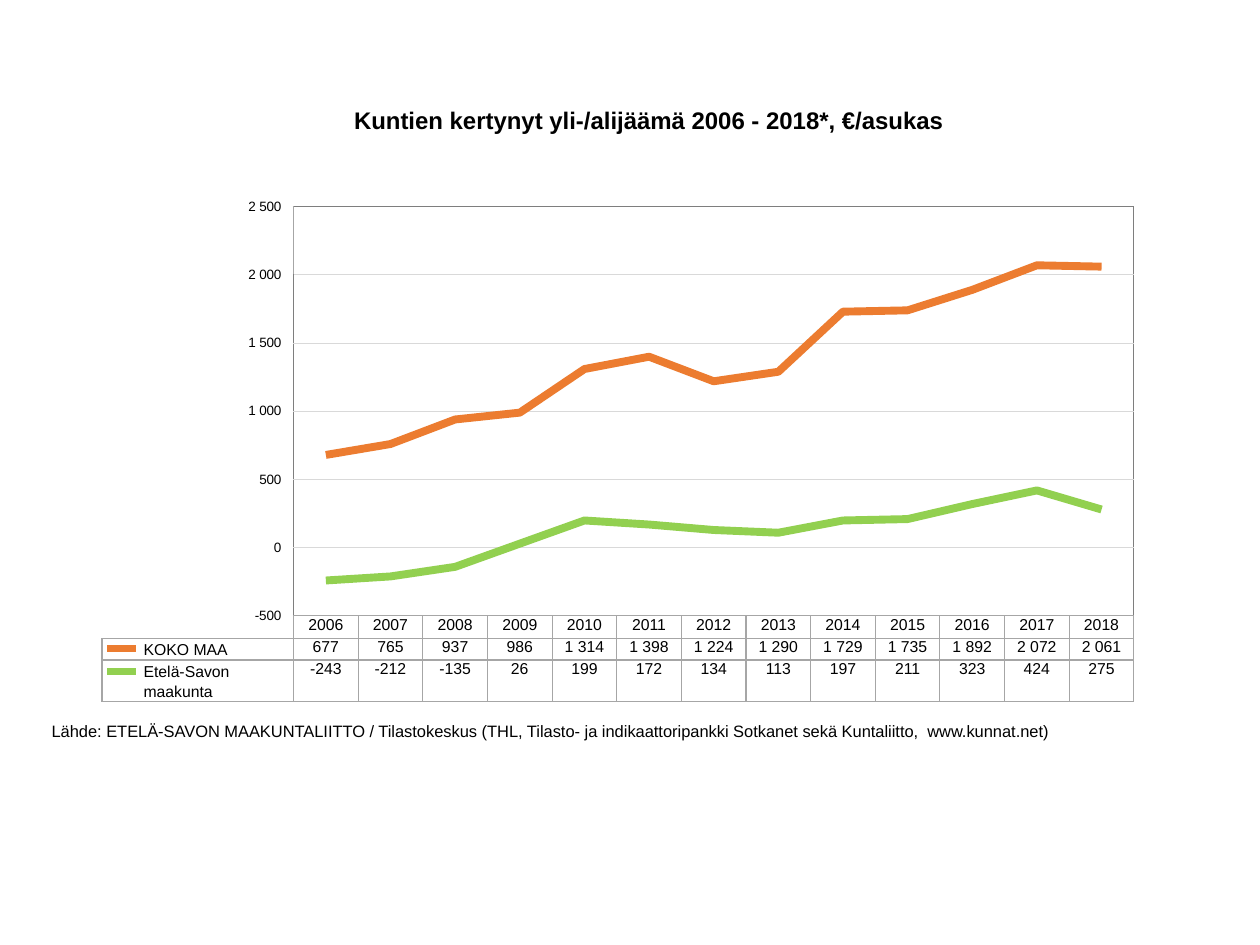
from lxml import etree
from pptx import Presentation
from pptx import util as u
from pptx.chart import data as cd
from pptx.dml.color import RGBColor
from pptx.enum import chart as ch, shapes, text
from pptx.oxml import parse_xml
from pptx.oxml.ns import nsdecls, qn

THEME = {
    "font": "Arial", "ink": "000000", "edge": "A6A6A6", "frame": "7E7E7E",
    "grid": "D9D9D9", "title": 13.7, "note": 9.4, "cell": 9, "axis": 7.7,
}
YEARS = range(2006, 2019)
ROWS = [
    ("KOKO MAA", "EC7C30", [677, 765, 937, 986, 1314, 1398, 1224, 1290,
                            1729, 1735, 1892, 2072, 2061]),
    ("Etelä-Savon maakunta", "92D050", [-243, -212, -135, 26, 199, 172, 134,
                                        113, 197, 211, 323, 424, 275]),
]
# Plot edges, shared by the table and the chart laid over it
LEFT, TOP, RIGHT, BASE = 2.33, 1.64, 9.0, 4.89
EDGE = 0.81
BANDS = 6


def style(font, size, bold=False):
    font.name, font.size, font.bold = THEME["font"], u.Pt(size), bold
    font.color.rgb = RGBColor.from_string(THEME["ink"])


def fill_box(frame, words, size, bold=False, align=text.PP_ALIGN.LEFT):
    """Set one paragraph in a text frame or cell without margins."""
    frame.margin_left = frame.margin_right = 0
    frame.margin_top = frame.margin_bottom = 0
    frame.vertical_anchor = text.MSO_ANCHOR.TOP
    para = (frame.text_frame if hasattr(frame, "text_frame") else frame).paragraphs[0]
    para.text, para.alignment = words, align
    style(para.font, size, bold)
    for run in para.runs:
        style(run.font, size, bold)
    return para


deck = Presentation()
deck.slide_width, deck.slide_height = u.Inches(10), u.Inches(7.5)
slide = deck.slides.add_slide(deck.slide_layouts[5])

# Title
title = slide.shapes.title
title.left, title.top = u.Inches(2.81), u.Inches(0.84)
title.width, title.height = u.Inches(4.7), u.Inches(0.23)
title.text_frame.auto_size = text.MSO_AUTO_SIZE.NONE
title.text_frame.word_wrap = False
fill_box(title.text_frame, "Kuntien kertynyt yli-/alijäämä 2006 - 2018*, €/asukas",
         THEME["title"], True)

# Table: merged bands carry the grid of the plot, the last rows the figures
tall = [(BASE - TOP) / BANDS] * BANDS + [0.18, 0.17, 0.33]
table = slide.shapes.add_table(
    len(tall), 14, u.Inches(EDGE), u.Inches(TOP),
    u.Inches(RIGHT - EDGE), u.Inches(sum(tall))).table
table.first_row = table.horz_banding = False
for col, slot in enumerate(table.columns):
    slot.width = u.Inches((RIGHT - LEFT) / 13 if col else LEFT - EDGE)
for slot, size in zip(table.rows, tall):
    slot.height = u.Inches(size)

grid = [[""] * 14 for band in range(BANDS)] + [["", *map(str, YEARS)]]
for name, tint, nums in ROWS:
    grid.append([name, *(f"{num:,}".replace(",", " ") for num in nums)])
for row, words in enumerate(grid):
    for col, word in enumerate(words):
        cell = table.cell(row, col)
        para = fill_box(cell, word, THEME["cell"],
                        align=text.PP_ALIGN.CENTER if col else text.PP_ALIGN.LEFT)
        if not col and word:
            cell.margin_left = u.Inches(0.33)
            para.line_spacing = u.Pt(11.8)
        tints = dict.fromkeys("LRTB", "edge")
        if not col and row <= BANDS:
            tints.update(L=None, T=None)
        elif row < BANDS:
            tints = {"L": "edge" if row == 0 else "frame", "R": "frame",
                     "T": "grid" if row else "frame",
                     "B": "grid" if row < BANDS - 1 else "edge"}
        props = cell._tc.get_or_add_tcPr()
        for side, tint in tints.items():
            edge = etree.SubElement(props, qn(f"a:ln{side}"), w="9525")
            if tint:
                paint = etree.SubElement(edge, qn("a:solidFill"))
                etree.SubElement(paint, qn("a:srgbClr"), val=THEME[tint])
            else:
                etree.SubElement(edge, qn("a:noFill"))
        cell.fill.background()
table.cell(0, 0).merge(table.cell(BANDS, 0))
for row in range(BANDS):
    table.cell(row, 1).merge(table.cell(row, 13))

# Line chart, plotted to the nearest ten
data = cd.CategoryChartData()
data.categories = [str(year) for year in YEARS]
for name, tint, nums in ROWS:
    data.add_series(name, [round(num, -1) for num in nums])
x, y, wide, high = 1.85, 1.5, 7.25, 3.5
chart = slide.shapes.add_chart(
    ch.XL_CHART_TYPE.LINE, u.Inches(x), u.Inches(y),
    u.Inches(wide), u.Inches(high), data).chart
chart.has_legend = chart.has_title = False
style(chart.font, THEME["axis"])
for line, (name, tint, nums) in zip(chart.plots[0].series, ROWS):
    line.smooth = False
    line.marker.style = ch.XL_MARKER_STYLE.NONE
    line.format.line.width = u.Pt(4.5)
    line.format.line.color.rgb = RGBColor.from_string(tint)

axis = chart.value_axis
axis.minimum_scale, axis.maximum_scale, axis.major_unit = -500, 2500, 500
axis.crosses = ch.XL_AXIS_CROSSES.MINIMUM
axis.has_major_gridlines = False
axis.tick_labels.number_format = '[>=1000]0" "000;[<0]-0;0'
axis.tick_labels.number_format_is_linked = False
chart.category_axis.tick_label_position = ch.XL_TICK_LABEL_POSITION.NONE
for side in (axis, chart.category_axis):
    side.major_tick_mark = side.minor_tick_mark = ch.XL_TICK_MARK.NONE
    side.format.line.fill.background()
# Unseen outer ticks hold the labels off the plot
axis.major_tick_mark = ch.XL_TICK_MARK.OUTSIDE

area = chart.plots[0]._element.getparent()
for old in area.findall(qn("c:layout")):
    area.remove(old)
spots = {"x": (LEFT - x) / wide, "y": (TOP - y) / high,
         "w": (RIGHT - LEFT) / wide, "h": (BASE - TOP) / high}
area.insert(0, parse_xml(
    f'<c:layout {nsdecls("c")}><c:manualLayout><c:layoutTarget val="inner"/>'
    '<c:xMode val="edge"/><c:yMode val="edge"/>'
    + "".join(f'<c:{key} val="{part:.4f}"/>' for key, part in spots.items())
    + "</c:manualLayout></c:layout>"))
clear = (f'<c:spPr {nsdecls("c", "a")}><a:noFill/>'
         '<a:ln><a:noFill/></a:ln></c:spPr>')
area.append(parse_xml(clear))
area.getparent().addnext(parse_xml(clear))

# Line keys beside the row names
for (name, tint, nums), level in zip(ROWS, (5.15, 5.33)):
    key = slide.shapes.add_connector(
        shapes.MSO_CONNECTOR.STRAIGHT, u.Inches(0.85), u.Inches(level),
        u.Inches(1.08), u.Inches(level))
    key.line.width = u.Pt(4)
    key.line.color.rgb = RGBColor.from_string(tint)
    etree.SubElement(key._element.spPr, qn("a:effectLst"))

# Source note
note = slide.shapes.add_textbox(
    u.Inches(0.41), u.Inches(5.72), u.Inches(8.01), u.Inches(0.16))
note.text_frame.word_wrap = True
fill_box(note.text_frame,
         "Lähde: ETELÄ-SAVON MAAKUNTALIITTO / Tilastokeskus (THL, Tilasto- ja "
         "indikaattoripankki Sotkanet sekä Kuntaliitto,  www.kunnat.net)",
         THEME["note"])

deck.save("out.pptx")
